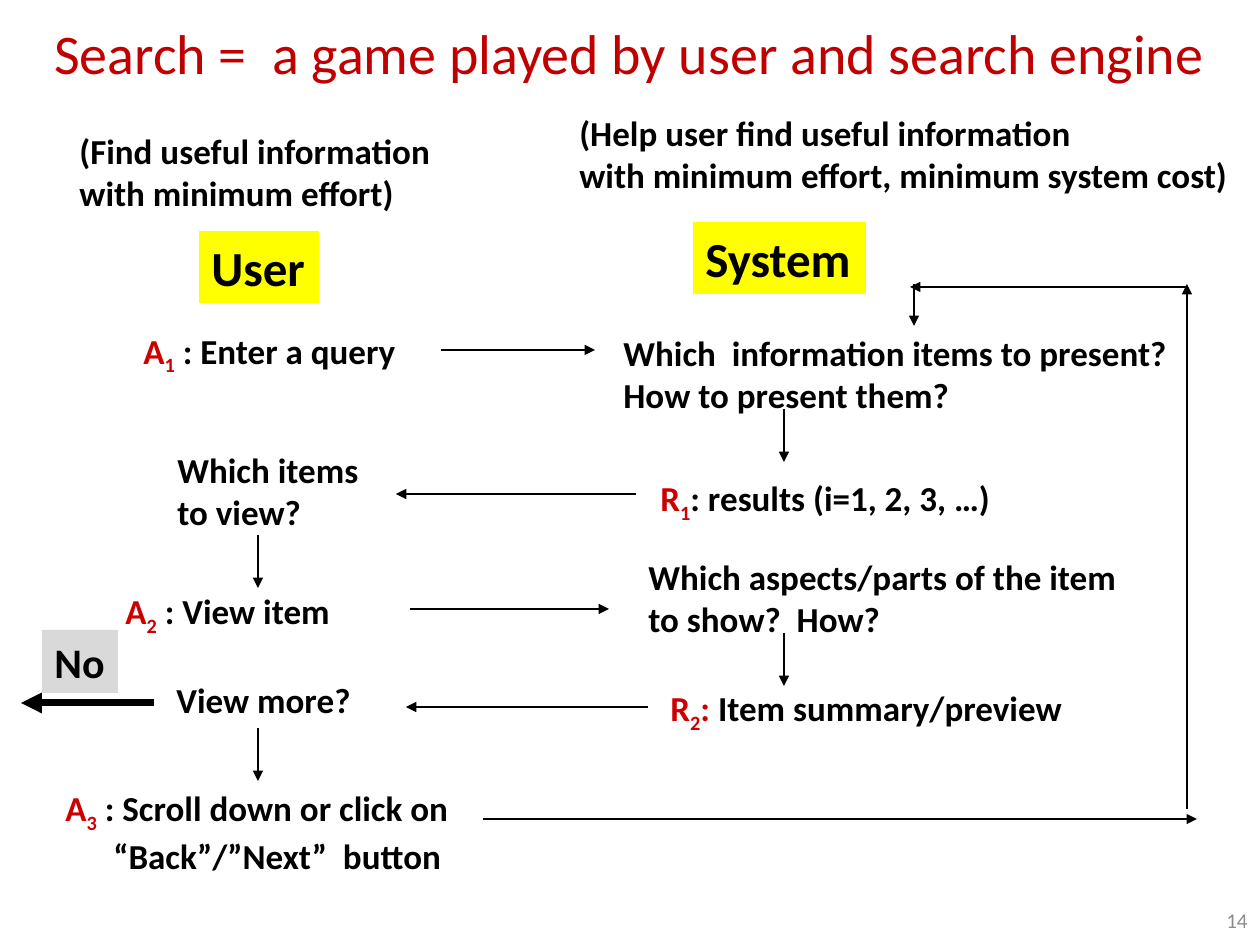
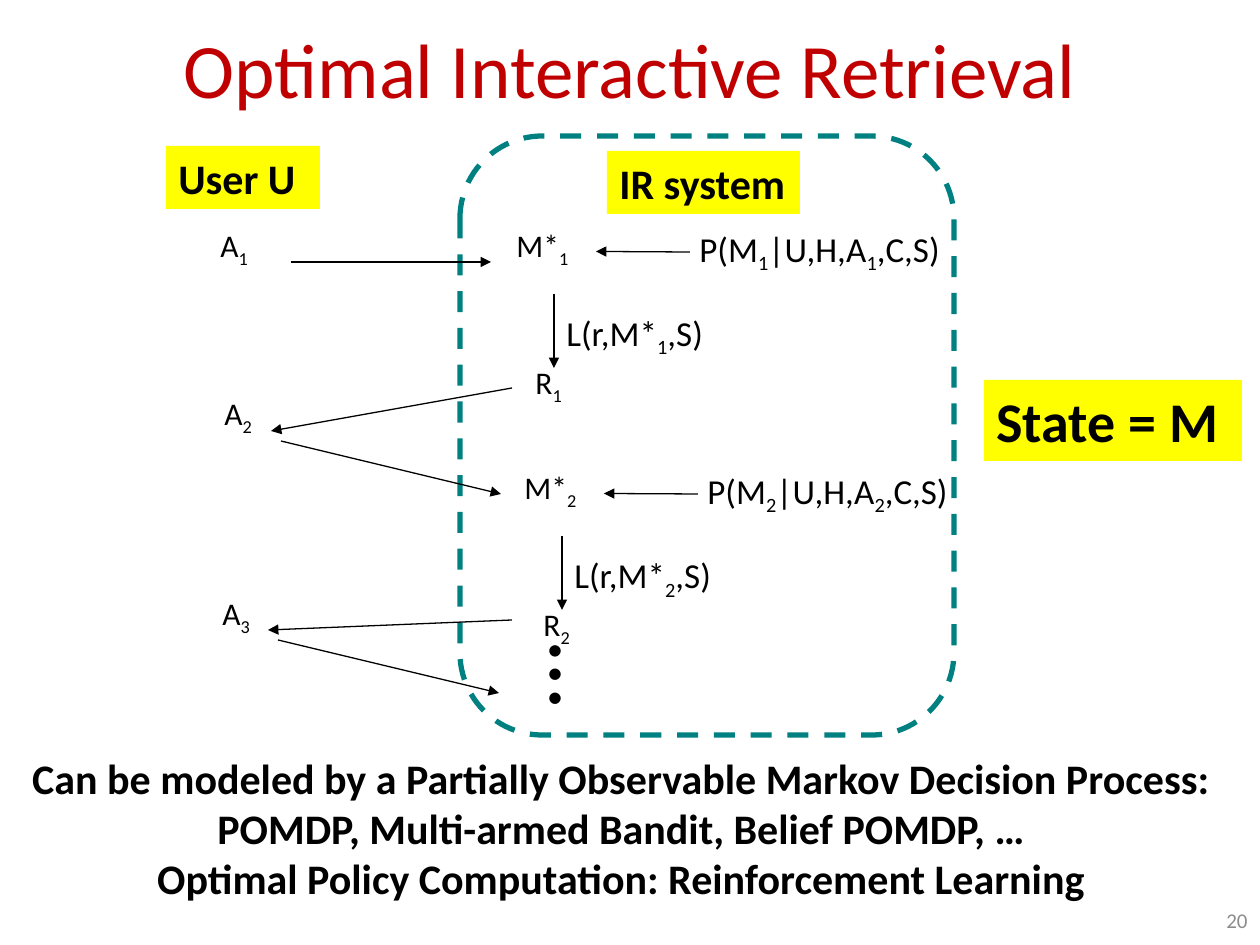
import dataclasses
import typing

import lxml.etree
import pptx
import pptx.dml.color
import pptx.enum.dml
import pptx.enum.shapes
import pptx.enum.text
import pptx.oxml.ns
import pptx.util

PX_PER_INCH = 126
FONT = "Calibri"
BLACK = "000000"
TITLE_RED = "C00000"
ACTION_RED = "CC0000"
YELLOW = "FFFF00"
LIGHT_GREY = "D9D9D9"
NUMBER_GREY = "8C8C8C"
TEAL = "008080"

ALIGN = pptx.enum.text.PP_ALIGN
ANCHOR = pptx.enum.text.MSO_ANCHOR


@dataclasses.dataclass(frozen=True)
class Label:
    x: int
    y: int
    w: int
    h: int
    text: str
    size: int = 20
    bold: bool = True
    red_lead: str = ""
    fill: str = ""
    color: str = BLACK
    align: typing.Any = ALIGN.LEFT
    anchor: typing.Any = ANCHOR.TOP
    later_indent: int = 0
    vertical: bool = False


@dataclasses.dataclass(frozen=True)
class Arrow:
    x1: int
    y1: int
    x2: int
    y2: int
    width: float = 0.75


def px(length: int) -> pptx.util.Emu:
    return pptx.util.Emu(round(length * 914400 / PX_PER_INCH))


def rgb(value: str) -> pptx.dml.color.RGBColor:
    return pptx.dml.color.RGBColor.from_string(value)


def format_paragraph(paragraph, size: int, bold: bool, color: str, align) -> None:
    paragraph.alignment = align
    paragraph.font.name = FONT
    paragraph.font.size = pptx.util.Pt(size)
    paragraph.font.bold = bold
    paragraph.font.color.rgb = rgb(color)


def add_runs(paragraph, text: str, color: str = "") -> None:
    for index, piece in enumerate(text.split("_")):
        if not piece:
            continue
        run = paragraph.add_run()
        run.text = piece
        if color:
            run.font.color.rgb = rgb(color)
        if index % 2:
            run.font._element.set("baseline", "-25000")


def draw_label(slide, label: Label):
    box = slide.shapes.add_textbox(px(label.x), px(label.y), px(label.w), px(label.h))
    if label.fill:
        box.fill.solid()
        box.fill.fore_color.rgb = rgb(label.fill)
    frame = box.text_frame
    wraps = bool(label.fill) or label.align != ALIGN.LEFT
    frame.word_wrap = wraps
    sizing = pptx.enum.text.MSO_AUTO_SIZE
    frame.auto_size = sizing.NONE if wraps else sizing.SHAPE_TO_FIT_TEXT
    frame.vertical_anchor = label.anchor
    if label.vertical:
        frame._txBody.bodyPr.set("vert", "eaVert")
    for index, line in enumerate(label.text.split("\n")):
        paragraph = frame.add_paragraph() if index else frame.paragraphs[0]
        if index and label.later_indent:
            properties = paragraph._p.get_or_add_pPr()
            properties.set("marL", str(px(label.later_indent)))
            properties.set("indent", "0")
        format_paragraph(paragraph, label.size, label.bold, label.color, label.align)
        if index == 0:
            add_runs(paragraph, label.red_lead, ACTION_RED)
        add_runs(paragraph, line)
    return box


def draw_arrow(slide, arrow: Arrow):
    connector = slide.shapes.add_connector(
        pptx.enum.shapes.MSO_CONNECTOR.STRAIGHT,
        px(arrow.x1), px(arrow.y1), px(arrow.x2), px(arrow.y2),
    )
    connector.line.color.rgb = rgb(BLACK)
    connector.line.width = pptx.util.Pt(arrow.width)
    qn = pptx.oxml.ns.qn
    head = lxml.etree.SubElement(connector.line._get_or_add_ln(), qn("a:tailEnd"))
    head.set("type", "triangle")
    lxml.etree.SubElement(connector._element.spPr, qn("a:effectLst"))
    return connector


def add_slide(deck, title: str, box: tuple[int, int, int, int], size: int, number: int):
    slide = deck.slides.add_slide(deck.slide_layouts[5])
    heading = slide.shapes.title
    heading.left, heading.top, heading.width, heading.height = map(px, box)
    heading.text_frame.text = title
    heading.text_frame.vertical_anchor = ANCHOR.MIDDLE
    format_paragraph(heading.text_frame.paragraphs[0], size, False, TITLE_RED, ALIGN.CENTER)
    draw_label(slide, Label(966, 895, 294, 50, str(number), 12, False, color=NUMBER_GREY,
                            align=ALIGN.RIGHT, anchor=ANCHOR.MIDDLE))
    return slide


GAME_LABELS = [
    Label(67, 123, 394, 97, "(Find useful information\nwith minimum effort)"),
    Label(567, 105, 679, 97,
          "(Help user find useful information\nwith minimum effort, minimum system cost)"),
    Label(199, 231, 120, 72, "User", 28, fill=YELLOW),
    Label(693, 222, 173, 72, "System", 28, fill=YELLOW),
    Label(131, 323, 290, 55, " : Enter a query", red_lead="A_1_"),
    Label(611, 325, 573, 97, "Which  information items to present?\nHow to present them?"),
    Label(165, 442, 215, 97, "Which items\nto view?"),
    Label(648, 470, 359, 55, ": results (i=1, 2, 3, …)", red_lead="R_1_"),
    Label(113, 583, 234, 56, " : View item", red_lead="A_2_"),
    Label(636, 549, 496, 97, "Which aspects/parts of the item\nto show?  How?"),
    Label(658, 680, 422, 55, "Item summary/preview", red_lead="R_2_: "),
    Label(164, 672, 202, 55, "View more?"),
    Label(53, 780, 413, 97, " : Scroll down or click on\n“Back”/”Next”  button",
          red_lead="A_3_", later_indent=48),
    Label(42, 630, 76, 63, "No", 24, fill=LIGHT_GREY),
]

GAME_ARROWS = [
    Arrow(441, 350, 595, 350),
    Arrow(636, 494, 396, 494),
    Arrow(410, 609, 609, 609),
    Arrow(648, 707, 406, 707),
    *(Arrow(784, top, 784, top + 53) for top in (409, 633)),
    *(Arrow(258, top, 258, top + 53) for top in (535, 728)),
    Arrow(483, 819, 1197, 819),
    Arrow(1187, 809, 1187, 284),
    Arrow(1187, 287, 910, 287),
    Arrow(914, 284, 914, 326),
    Arrow(154, 703, 21, 703, 4),
]

RETRIEVAL_LABELS = [
    Label(166, 146, 154, 63, "User U", 24, fill=YELLOW),
    Label(607, 151, 193, 63, "IR system", 24, fill=YELLOW),
    Label(984, 380, 258, 81, "State = M", 32, fill=YELLOW),
    Label(208, 220, 69, 63, "A_1_", 18, False),
    Label(212, 388, 69, 63, "A_2_", 18, False),
    Label(210, 588, 69, 63, "A_3_", 18, False),
    Label(512, 630, 139, 107, "…", 54, False, vertical=True),
    Label(0, 746, 1242, 165,
          "Can be modeled by a Partially Observable Markov Decision Process:\n"
          "POMDP, Multi-armed Bandit, Belief POMDP, …\n"
          "Optimal Policy Computation: Reinforcement Learning",
          24, align=ALIGN.CENTER),
]

RETRIEVAL_ARROWS = [
    Arrow(291, 262, 491, 262),
    Arrow(512, 388, 271, 431),
    Arrow(281, 441, 501, 494),
    Arrow(512, 620, 268, 630),
    Arrow(278, 640, 499, 693),
]


def draw_system_round(slide, turn: int) -> None:
    dx, dy = 8 * (turn - 1), 242 * (turn - 1)
    model = draw_label(slide, Label(504 + dx, 220 + dy, 92, 63, f"M*_{turn}_", 18, False))
    draw_label(slide, Label(687 + dx, 221 + dy, 271, 55,
                            f"P(M_{turn}_|U,H,A_{turn}_,C,S)", bold=False))
    draw_label(slide, Label(554 + dx, 305 + dy, 165, 55, f"L(r,M*_{turn}_,S)", bold=False))
    draw_label(slide, Label(523 + dx, 357 + dy, 72, 63, f"R_{turn}_", 18, False))
    update = draw_arrow(slide, Arrow(690 + dx, 252 + dy, 596 + dx, 252 + dy))
    update.end_connect(model, 3)
    draw_arrow(slide, Arrow(554 + dx, 294 + dy, 554 + dx, 368 + dy))


def draw_system_boundary(slide) -> None:
    boundary = slide.shapes.add_shape(
        pptx.enum.shapes.MSO_SHAPE.FLOWCHART_ALTERNATE_PROCESS,
        px(460), px(136), px(494), px(599),
    )
    boundary.shadow.inherit = False
    boundary.fill.background()
    boundary.line.color.rgb = rgb(TEAL)
    boundary.line.width = pptx.util.Pt(3)
    boundary.line.dash_style = pptx.enum.dml.MSO_LINE.DASH


def draw_parts(slide, labels: list[Label], arrows: list[Arrow]) -> None:
    for label in labels:
        draw_label(slide, label)
    for arrow in arrows:
        draw_arrow(slide, arrow)


def main() -> None:
    deck = pptx.Presentation()
    deck.slide_width, deck.slide_height = px(1260), px(945)

    game = add_slide(deck, "Search =  a game played by user and search engine",
                     (-32, -21, 1323, 147), 32, 14)
    draw_parts(game, GAME_LABELS, GAME_ARROWS)

    retrieval = add_slide(deck, "Optimal Interactive Retrieval", (0, 0, 1260, 136), 44, 20)
    draw_system_boundary(retrieval)
    draw_parts(retrieval, RETRIEVAL_LABELS, RETRIEVAL_ARROWS)
    for turn in (1, 2):
        draw_system_round(retrieval, turn)

    deck.save("out.pptx")


if __name__ == "__main__":
    main()
